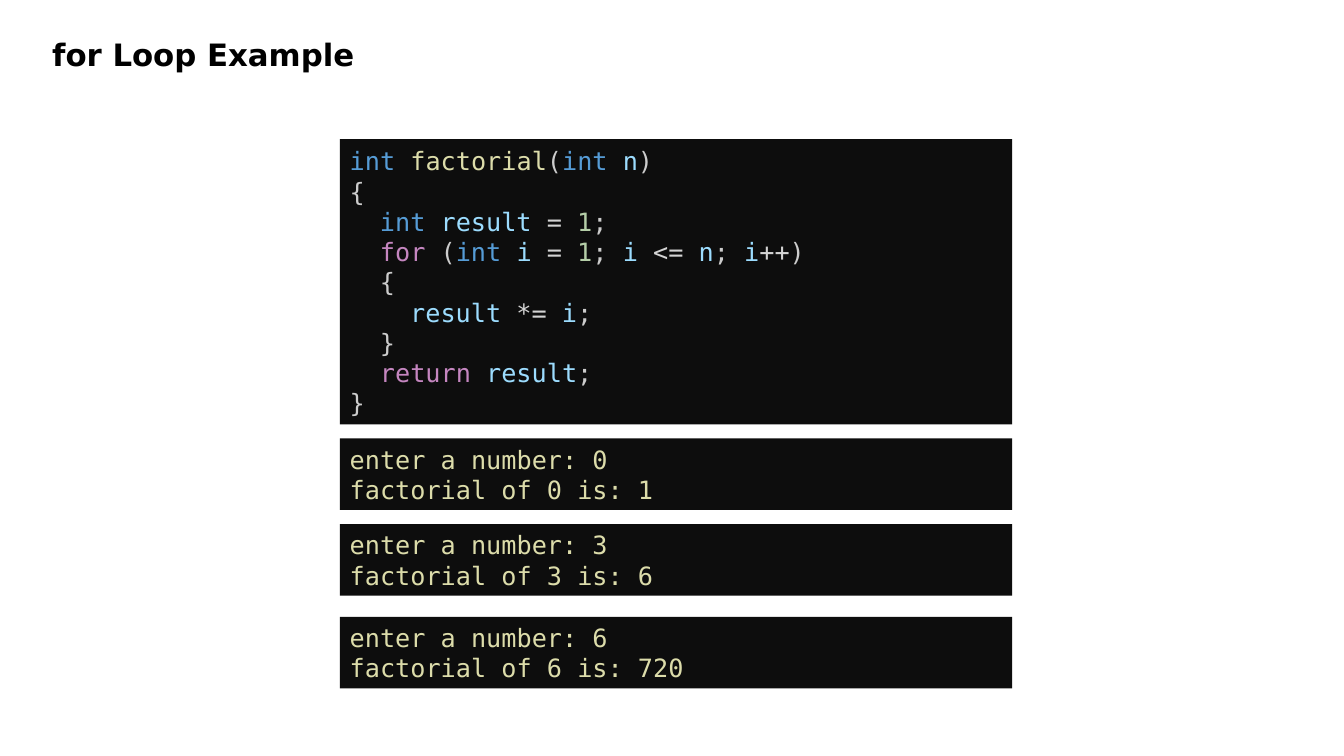
"""Build a slide showing a for loop that computes factorials, with three sample runs."""
from pptx import Presentation
from pptx.dml.color import RGBColor
from pptx.enum.shapes import MSO_SHAPE
from pptx.enum.text import MSO_ANCHOR, MSO_AUTO_SIZE, PP_ALIGN
from pptx.util import Inches, Pt

TITLE = "for Loop Example"
CODE = [
    (0, [("int ", "type"), ("factorial", "function"), ("(", "plain"),
         ("int ", "type"), ("n", "variable"), (")", "plain")]),
    (0, [("{", "plain")]),
    (1, [("int ", "type"), ("result ", "variable"), ("= ", "operator"),
         ("1", "number"), (";", "plain")]),
    (1, [("for", "keyword"), (" (", "plain"), ("int ", "type"), ("i ", "variable"),
         ("= ", "operator"), ("1", "number"), ("; ", "plain"), ("i ", "variable"),
         ("<= ", "operator"), ("n", "variable"), ("; ", "plain"), ("i", "variable"),
         ("++", "operator"), (")", "plain")]),
    (1, [("{", "plain")]),
    (2, [("result ", "variable"), ("*= ", "operator"), ("i", "variable"), (";", "plain")]),
    (1, [("}", "plain")]),
    (1, [("return ", "keyword"), ("result", "variable"), (";", "plain")]),
    (0, [("}", "plain")]),
]
SAMPLE_RUNS = [(4.35, 0, 1), (5.2, 3, 6), (6.12, 6, 720)]

THEME = {
    "colors": {
        "title": "000000", "panel": "0D0D0D", "type": "569CD6", "function": "DCDCAA",
        "plain": "CCCCCC", "variable": "9CDCFE", "operator": "D4D4D4",
        "number": "B5CEA8", "keyword": "C586C0", "output": "DCDCAA",
    },
    "title": {"name": "DejaVu Sans", "size": Pt(22), "bold": True},
    "code": {"name": "DejaVu Sans Mono", "size": Pt(18)},
    "line_spacing": Pt(21.6),
}
PANEL_LEFT, PANEL_WIDTH = 3.37, 6.67
CODE_TOP, CODE_HEIGHT, RUN_HEIGHT = 1.38, 2.83, 0.71
INDENT = 0.3


def color(role):
    return RGBColor.from_string(THEME["colors"][role])


def apply_format(target, values):
    for name, value in values.items():
        setattr(target, name, value)


def add_run(paragraph, text, role, font):
    run = paragraph.add_run()
    run.text = text
    apply_format(run.font, font)
    run.font.color.rgb = color(role)


def add_title(slide):
    box = slide.shapes.add_textbox(Inches(0.42), 0, Inches(12.57), Inches(0.77))
    apply_format(box.text_frame, {"word_wrap": True, "vertical_anchor": MSO_ANCHOR.BOTTOM})
    add_run(box.text_frame.paragraphs[0], TITLE, "title", THEME["title"])


def add_panel(slide, top, height, lines):
    panel = slide.shapes.add_shape(
        MSO_SHAPE.RECTANGLE, Inches(PANEL_LEFT), Inches(top),
        Inches(PANEL_WIDTH), Inches(height))
    panel.shadow.inherit = False
    panel.fill.solid()
    panel.fill.fore_color.rgb = color("panel")
    panel.line.fill.background()
    frame = panel.text_frame
    apply_format(frame, {
        "word_wrap": True,
        "auto_size": MSO_AUTO_SIZE.SHAPE_TO_FIT_TEXT,
        "vertical_anchor": MSO_ANCHOR.MIDDLE,
    })
    for index, (depth, tokens) in enumerate(lines):
        paragraph = frame.add_paragraph() if index else frame.paragraphs[0]
        apply_format(paragraph, {
            "alignment": PP_ALIGN.LEFT, "line_spacing": THEME["line_spacing"]})
        properties = paragraph._p.get_or_add_pPr()
        properties.set("marL", str(Inches(INDENT * depth)))
        properties.set("indent", "0")
        for text, role in tokens:
            add_run(paragraph, text, role, THEME["code"])


def main():
    presentation = Presentation()
    apply_format(presentation, {"slide_width": Inches(13.33), "slide_height": Inches(7.5)})
    slide = presentation.slides.add_slide(presentation.slide_layouts[6])
    add_title(slide)
    add_panel(slide, CODE_TOP, CODE_HEIGHT, CODE)
    for top, number, factorial in SAMPLE_RUNS:
        output = [f"enter a number: {number}", f"factorial of {number} is: {factorial}"]
        add_panel(slide, top, RUN_HEIGHT, [(0, [(text, "output")]) for text in output])
    presentation.save("out.pptx")


if __name__ == "__main__":
    main()
